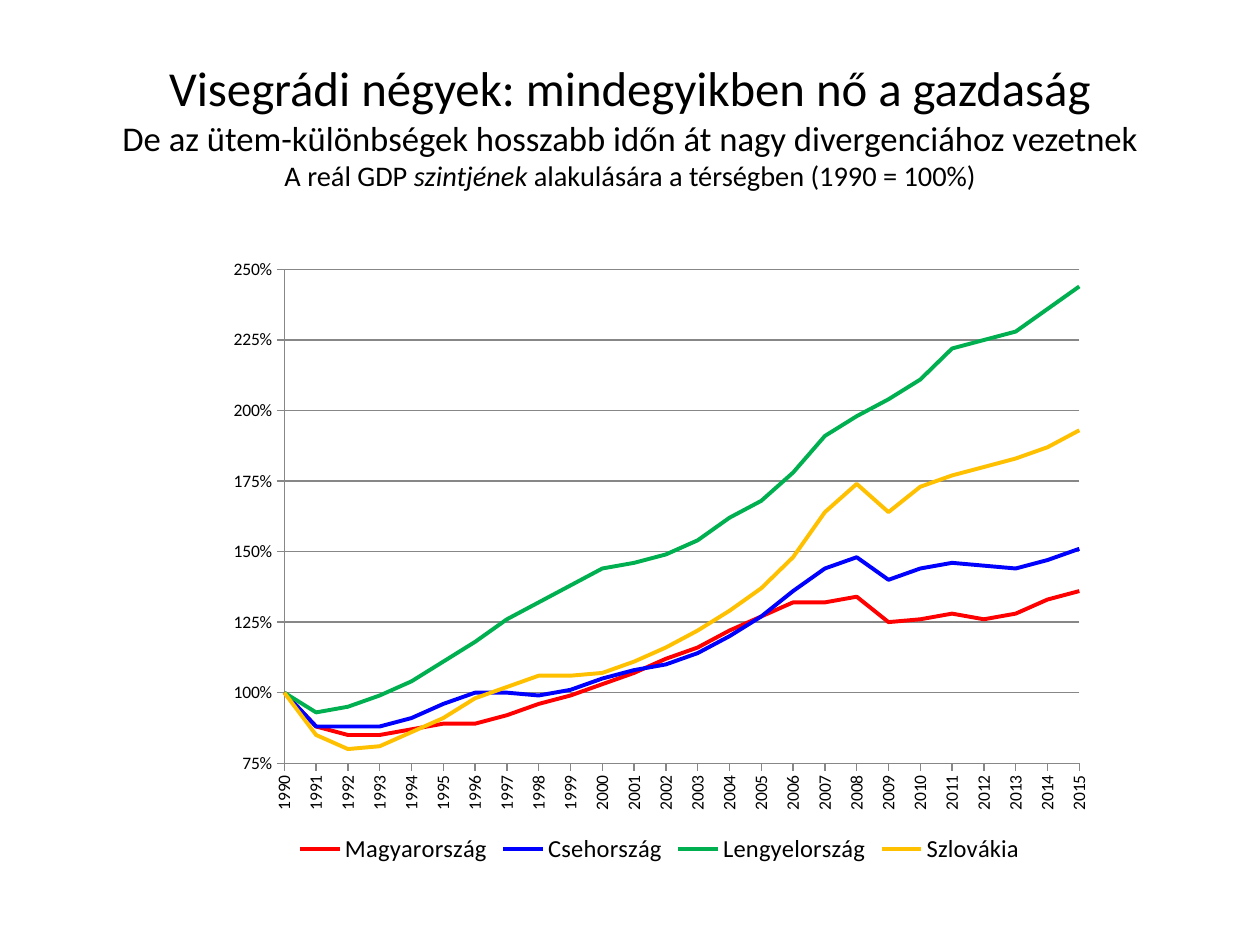
from pptx import Presentation
from pptx.chart.data import CategoryChartData
from pptx.dml.color import RGBColor
from pptx.enum.chart import XL_CHART_TYPE as ChartType, XL_LEGEND_POSITION as LegendSide, XL_TICK_MARK as Tick
from pptx.enum.text import MSO_ANCHOR, PP_ALIGN
from pptx.oxml import parse_xml
from pptx.oxml.ns import nsdecls, qn
from pptx.util import Cm, Pt

FONT = "Calibri"
BLACK = RGBColor(0, 0, 0)
GRAY = RGBColor(0x87, 0x87, 0x87)
RED = RGBColor(0xFF, 0, 0)
BLUE = RGBColor(0, 0, 0xFF)
GREEN = RGBColor(0, 0xB0, 0x50)
GOLD = RGBColor(0xFF, 0xC0, 0)

# Title lines: size and (text, italic) spans
TITLE = [
    (27.9, [("Visegrádi négyek: mindegyikben nő a gazdaság", False)]),
    (19.8, [("De az ütem-különbségek hosszabb időn át nagy divergenciához vezetnek", False)]),
    (16.2, [("A reál GDP ", False), ("szintjének", True),
            (" alakulására a térségben (1990 = 100%)", False)]),
]

# Real GDP, 1990 = 1
YEARS = [str(year) for year in range(1990, 2016)]
COUNTRIES = [
    ("Magyarország", RED, [
        1, 0.88, 0.85, 0.85, 0.87, 0.89, 0.89, 0.92, 0.96, 0.99, 1.03, 1.07, 1.12,
        1.16, 1.22, 1.27, 1.32, 1.32, 1.34, 1.25, 1.26, 1.28, 1.26, 1.28, 1.33, 1.36]),
    ("Csehország", BLUE, [
        1, 0.88, 0.88, 0.88, 0.91, 0.96, 1, 1, 0.99, 1.01, 1.05, 1.08, 1.1,
        1.14, 1.2, 1.27, 1.36, 1.44, 1.48, 1.4, 1.44, 1.46, 1.45, 1.44, 1.47, 1.51]),
    ("Lengyelország", GREEN, [
        1, 0.93, 0.95, 0.99, 1.04, 1.11, 1.18, 1.26, 1.32, 1.38, 1.44, 1.46, 1.49,
        1.54, 1.62, 1.68, 1.78, 1.91, 1.98, 2.04, 2.11, 2.22, 2.25, 2.28, 2.36, 2.44]),
    ("Szlovákia", GOLD, [
        1, 0.85, 0.8, 0.81, 0.86, 0.91, 0.98, 1.02, 1.06, 1.06, 1.07, 1.11, 1.16,
        1.22, 1.29, 1.37, 1.48, 1.64, 1.74, 1.64, 1.73, 1.77, 1.8, 1.83, 1.87, 1.93]),
]
VALUE_AXIS = {"minimum_scale": 0.75, "maximum_scale": 2.5, "major_unit": 0.25,
              "has_major_gridlines": True}
PLOT = {"x": 0.08, "y": 0.04, "w": 0.89, "h": 0.79}  # shares of the chart frame


def style_font(font, **values):
    for name, value in {"name": FONT, **values}.items():
        setattr(font, name, value)
    font.color.rgb = BLACK


def style_line(line, color, width):
    line.color.rgb = color
    line.width = Pt(width)


def add_title(page):
    box = page.shapes.add_textbox(Cm(1.27), Cm(0.74), Cm(22.86), Cm(2.77))
    frame = box.text_frame
    for name, value in {"word_wrap": True, "vertical_anchor": MSO_ANCHOR.TOP,
                        "margin_top": Cm(0.43)}.items():
        setattr(frame, name, value)
    para = frame.paragraphs[0]
    para.alignment = PP_ALIGN.CENTER
    for index, (size, spans) in enumerate(TITLE):
        if index:
            para.add_line_break()
        for text, italic in spans:
            span = para.add_run()
            span.text = text
            style_font(span.font, size=Pt(size), italic=italic)


def add_gdp_chart(page):
    data = CategoryChartData(number_format="0%")
    data.categories = YEARS
    for name, _, values in COUNTRIES:
        data.add_series(name, values)
    chart = page.shapes.add_chart(ChartType.LINE, Cm(4.29), Cm(4.93), Cm(18.01), Cm(12.6), data).chart
    chart.has_title = False
    style_font(chart.font, size=Pt(10))

    # Lines
    chart.plots[0].vary_by_categories = False
    for series, (_, color, _) in zip(chart.plots[0].series, COUNTRIES):
        series.smooth = False
        style_line(series.format.line, color, 2.25)

    # Axes
    years, values = chart.category_axis, chart.value_axis
    for name, value in VALUE_AXIS.items():
        setattr(values, name, value)
    style_line(values.major_gridlines.format.line, GRAY, 0.75)
    for axis in (years, values):
        axis.major_tick_mark = Tick.OUTSIDE
        axis.minor_tick_mark = Tick.NONE
        style_line(axis.format.line, GRAY, 0.75)
        style_font(axis.tick_labels.font, size=Pt(10))
    values.tick_labels.number_format = "0%"
    values.tick_labels.number_format_is_linked = False

    # Upright year labels, and lines that start on the axis
    label_body = years._element.find(qn("c:txPr")).find(qn("a:bodyPr"))
    label_body.set("rot", "-5400000")
    label_body.set("vert", "horz")
    crossing = parse_xml(f'<c:crossBetween {nsdecls("c")} val="midCat"/>')
    values._element.find(qn("c:majorUnit")).addprevious(crossing)

    # Legend
    chart.has_legend = True
    chart.legend.position = LegendSide.BOTTOM
    chart.legend.include_in_layout = False
    style_font(chart.legend.font, size=Pt(14))

    # Fixed plot area
    parts = "".join(f'<c:{side} val="{share}"/>' for side, share in PLOT.items())
    layout = parse_xml(
        f'<c:layout {nsdecls("c")}><c:manualLayout><c:layoutTarget val="inner"/>'
        f'<c:xMode val="edge"/><c:yMode val="edge"/>{parts}</c:manualLayout></c:layout>')
    area = chart._chartSpace.chart.plotArea
    for old in area.findall(qn("c:layout")):
        area.remove(old)
    area.insert(0, layout)


def main():
    deck = Presentation()
    deck.slide_width, deck.slide_height = Cm(25.4), Cm(19.05)
    page = deck.slides.add_slide(deck.slide_layouts[6])
    add_title(page)
    add_gdp_chart(page)
    deck.save("out.pptx")


if __name__ == "__main__":
    main()
